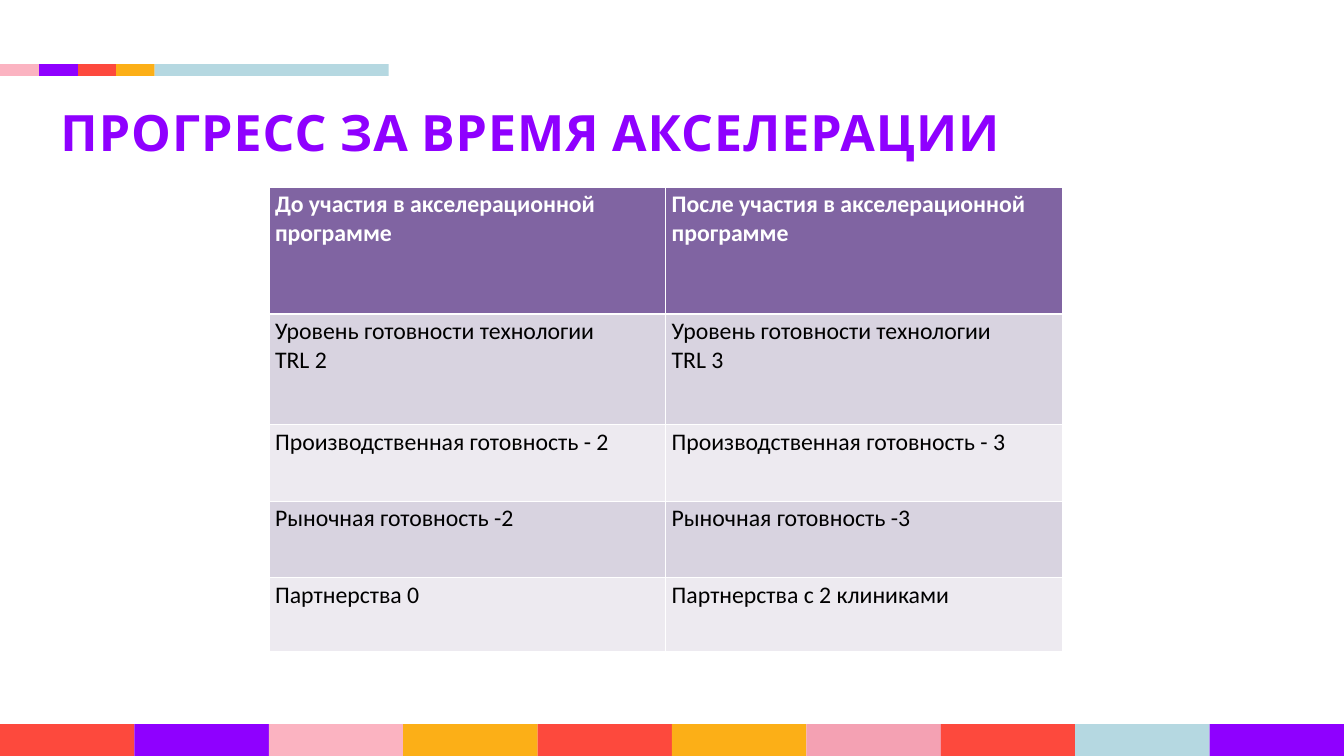
from itertools import accumulate

from lxml import etree
from pptx import Presentation
from pptx.dml.color import RGBColor
from pptx.enum.shapes import MSO_SHAPE
from pptx.enum.text import MSO_ANCHOR, MSO_AUTO_SIZE
from pptx.oxml.ns import qn
from pptx.util import Inches, Pt

RECTANGLE = MSO_SHAPE.RECTANGLE
TOP = MSO_ANCHOR.TOP
GROW = MSO_AUTO_SIZE.SHAPE_TO_FIT_TEXT

WIDTH, HEIGHT = 21.99, 12.37
TITLE_FONT, TABLE_FONT = "Cabin", "Calibri"

WHITE = RGBColor(0xFF, 0xFF, 0xFF)
BLACK = RGBColor(0x00, 0x00, 0x00)
VIOLET = RGBColor(0x8F, 0x00, 0xFF)
RED = RGBColor(0xFD, 0x49, 0x3D)
AMBER = RGBColor(0xFC, 0xAF, 0x17)
PINK = RGBColor(0xFB, 0xB3, 0xC1)
ROSE = RGBColor(0xF4, 0xA1, 0xB3)
SKY = RGBColor(0xB5, 0xD8, 0xE1)
HEADER_FILL = RGBColor(0x80, 0x64, 0xA2)
DARK_BAND = RGBColor(0xD8, 0xD3, 0xE0)
LIGHT_BAND = RGBColor(0xED, 0xEA, 0xF0)

TOP_STRIPE = [(PINK, 0.64), (VIOLET, 0.64), (RED, 0.62), (AMBER, 0.63), (SKY, 3.83)]
BOTTOM_COLORS = [RED, VIOLET, PINK, AMBER, RED, AMBER, ROSE, RED, SKY, VIOLET]

ROW_HEIGHTS = [2.08, 1.81, 1.25, 1.25, 1.21]
TABLE_ROWS = [
    ("До участия в акселерационной программе",
     "После участия в акселерационной программе"),
    ("Уровень готовности технологии\nTRL 2", "Уровень готовности технологии\nTRL 3"),
    ("Производственная готовность - 2", "Производственная готовность - 3"),
    ("Рыночная готовность -2", "Рыночная готовность -3"),
    ("Партнерства 0", "Партнерства c 2 клиниками"),
]


def write_text(frame, text, *, font, size, color, bold=False, spacing=None):
    """Fill a text frame, one paragraph for each line of text."""
    frame.word_wrap = True
    for index, line in enumerate(text.split("\n")):
        paragraph = frame.paragraphs[0] if index == 0 else frame.add_paragraph()
        run = paragraph.add_run()
        run.text = line
        run.font.name = font
        run.font.size = Pt(size)
        run.font.bold = bold
        run.font.color.rgb = color
        if spacing is not None:
            run.font._element.set("spc", str(round(spacing * 100)))


def add_stripe(slide, top, height, segments):
    """Lay coloured blocks side by side from the left edge."""
    edges = accumulate((width for _, width in segments), initial=0)
    for left, (color, width) in zip(edges, segments):
        block = slide.shapes.add_shape(
            RECTANGLE, Inches(left), Inches(top), Inches(width), Inches(height))
        block.shadow.inherit = False
        block.fill.solid()
        block.fill.fore_color.rgb = color
        block.line.fill.background()


def add_title(slide, text):
    box = slide.shapes.add_textbox(
        Inches(0.95), Inches(1.64), Inches(20.54), Inches(1.01))
    frame = box.text_frame
    frame.margin_left = frame.margin_right = frame.margin_bottom = Inches(0.04)
    frame.margin_top = Inches(0.02)
    frame.vertical_anchor = TOP
    frame.auto_size = GROW
    write_text(frame, text, font=TITLE_FONT, size=59, color=VIOLET,
               bold=True, spacing=1.2)


def set_borders(cell, **widths):
    """Draw white cell borders, with widths in points by side."""
    properties = cell._tc.get_or_add_tcPr()
    for index, (side, width) in enumerate(widths.items()):
        line = etree.Element(qn(f"a:ln{side}"), w=str(Pt(width)))
        fill = etree.SubElement(line, qn("a:solidFill"))
        etree.SubElement(fill, qn("a:srgbClr"), val=str(WHITE))
        properties.insert(index, line)


def add_progress_table(slide):
    column_width = 6.49
    table = slide.shapes.add_table(
        len(TABLE_ROWS), 2, Inches(4.4), Inches(3.06),
        Inches(2 * column_width), Inches(sum(ROW_HEIGHTS))).table
    for column in table.columns:
        column.width = Inches(column_width)
    for row_index, texts in enumerate(TABLE_ROWS):
        table.rows[row_index].height = Inches(ROW_HEIGHTS[row_index])
        header = row_index == 0
        band = DARK_BAND if row_index % 2 else LIGHT_BAND
        for column_index, text in enumerate(texts):
            cell = table.cell(row_index, column_index)
            cell.fill.solid()
            cell.fill.fore_color.rgb = HEADER_FILL if header else band
            set_borders(cell, L=1, R=1, T=3 if row_index == 1 else 1,
                        B=3 if header else 1)
            write_text(cell.text_frame, text, font=TABLE_FONT, size=28,
                       color=WHITE if header else BLACK, bold=header)


def main():
    presentation = Presentation()
    presentation.slide_width = Inches(WIDTH)
    presentation.slide_height = Inches(HEIGHT)
    slide = presentation.slides.add_slide(presentation.slide_layouts[6])

    # Colour stripes at the top left and along the bottom edge
    add_stripe(slide, 1.05, 0.19, TOP_STRIPE)
    block_width = WIDTH / len(BOTTOM_COLORS)
    add_stripe(slide, 11.85, 0.52, [(color, block_width) for color in BOTTOM_COLORS])

    # Title and comparison table
    add_title(slide, "ПРОГРЕСС ЗА ВРЕМЯ АКСЕЛЕРАЦИИ")
    add_progress_table(slide)

    presentation.save("out.pptx")


if __name__ == "__main__":
    main()
